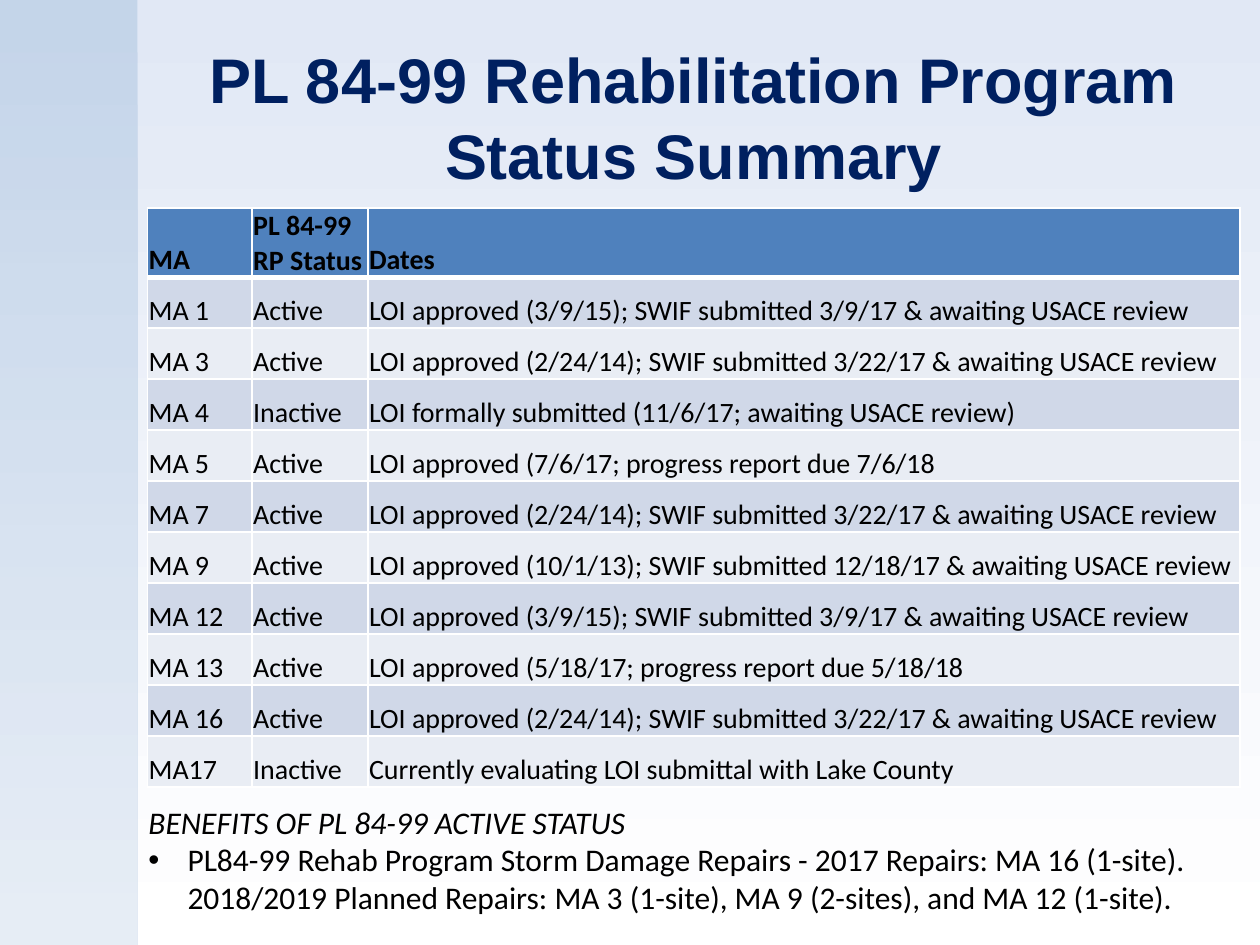
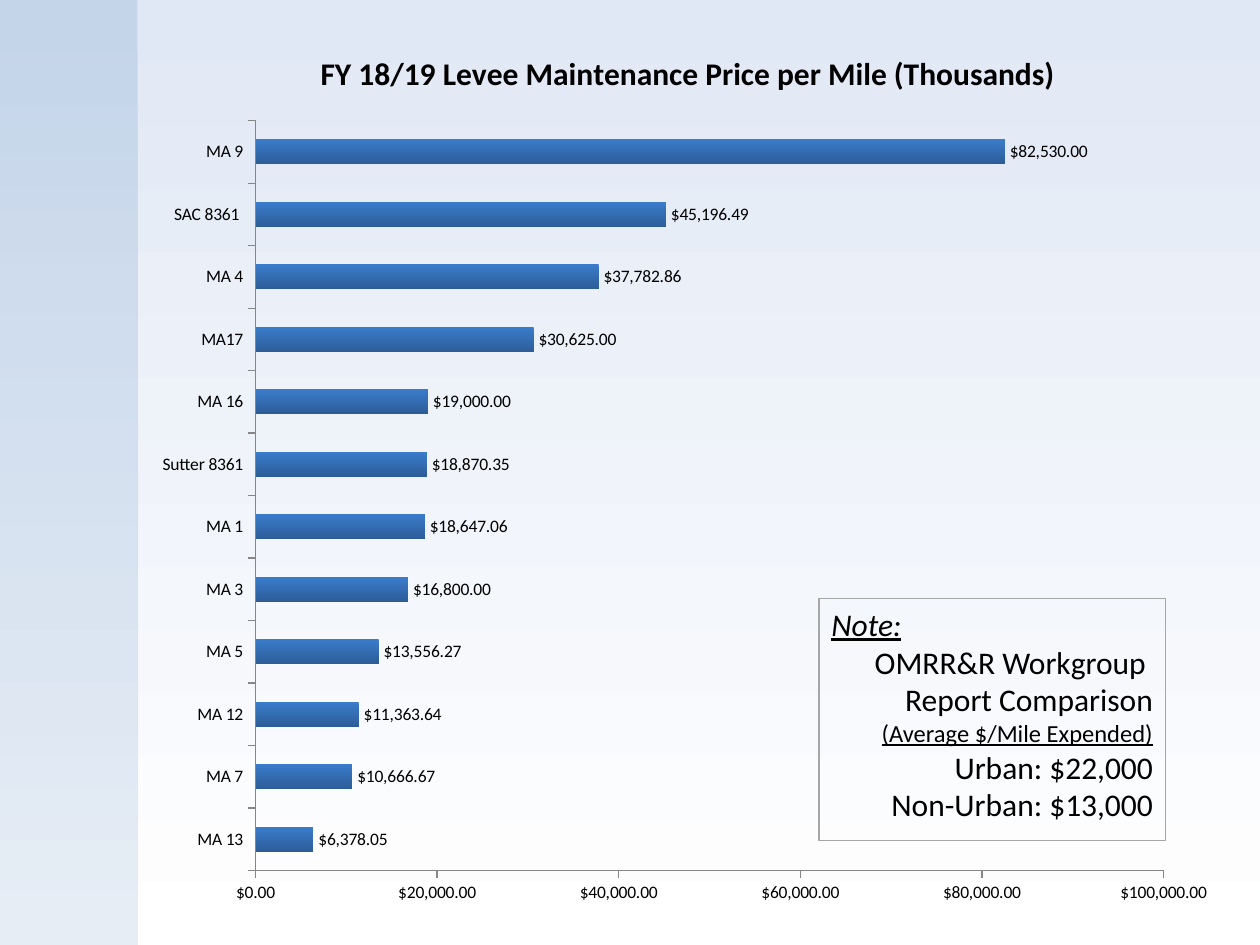
from dataclasses import dataclass
from typing import Optional

from lxml import etree
from pptx import Presentation
from pptx.chart import data as chart_data
from pptx.dml.color import RGBColor
from pptx.enum import chart as ch, shapes, text
from pptx.oxml import ns, parse_xml
from pptx.util import Inches, Pt

NAVY = RGBColor(0x00, 0x20, 0x60)
BLACK = RGBColor(0x00, 0x00, 0x00)
WHITE = RGBColor(0xFF, 0xFF, 0xFF)
PALE_SKY = RGBColor(0xE1, 0xE8, 0xF5)
BAND_TOP = RGBColor(0xB9, 0xCD, 0xE5)
BAND_BOTTOM = RGBColor(0xDC, 0xE6, 0xF2)
HEADER_BLUE = RGBColor(0x4F, 0x81, 0xBD)
ROW_FILLS = (RGBColor(0xD0, 0xD8, 0xE8), RGBColor(0xE9, 0xED, 0xF4))
BAR_TOP = RGBColor(0x3A, 0x7C, 0xCB)
BAR_BOTTOM = RGBColor(0x2C, 0x5D, 0x98)
AXIS_GRAY = RGBColor(0x86, 0x86, 0x86)
NOTE_GRAY = RGBColor(0xA6, 0xA6, 0xA6)

BODY_FONT = "Calibri"
TITLE_FONT = "Arial"
DOLLARS = '"$"#,##0.00'


@dataclass(frozen=True)
class Box:
    left: float
    top: float
    width: float
    height: float

    def lengths(self) -> tuple:
        return tuple(Inches(v) for v in (self.left, self.top, self.width, self.height))


@dataclass(frozen=True)
class Line:
    words: str
    size: int = 18
    font: str = BODY_FONT
    color: RGBColor = BLACK
    bold: bool = False
    italic: bool = False
    underline: bool = False
    align: text.PP_ALIGN = text.PP_ALIGN.LEFT
    bullet: Optional[str] = None


@dataclass(frozen=True)
class Area:
    name: str
    status: str
    dates: str


SWIF_MARCH_9 = "LOI approved (3/9/15); SWIF submitted 3/9/17 & awaiting USACE review"
SWIF_MARCH_22 = "LOI approved (2/24/14); SWIF submitted 3/22/17 & awaiting USACE review"
AREAS = [
    Area("MA 1", "Active", SWIF_MARCH_9),
    Area("MA 3", "Active", SWIF_MARCH_22),
    Area("MA 4", "Inactive", "LOI formally submitted (11/6/17; awaiting USACE review)"),
    Area("MA 5", "Active", "LOI approved (7/6/17; progress report due 7/6/18"),
    Area("MA 7", "Active", SWIF_MARCH_22),
    Area("MA 9", "Active",
         "LOI approved (10/1/13); SWIF submitted 12/18/17 & awaiting USACE review"),
    Area("MA 12", "Active", SWIF_MARCH_9),
    Area("MA 13", "Active", "LOI approved (5/18/17; progress report due 5/18/18"),
    Area("MA 16", "Active", SWIF_MARCH_22),
    Area("MA17", "Inactive", "Currently evaluating LOI submittal with Lake County"),
]
COLUMN_WIDTHS = (0.83, 0.92, 6.92)
HEADER_HEIGHT = 0.55
STATUS_BOX = Box(1.17, 1.65, 8.67, 4.6)

PRICE_PER_MILE = {
    "MA 13": 6378.05, "MA 7": 10666.67, "MA 12": 11363.64, "MA 5": 13556.27,
    "MA 3": 16800, "MA 1": 18647.06, "Sutter 8361": 18870.35, "MA 16": 19000,
    "MA17": 30625, "MA 4": 37782.86, "SAC 8361 ": 45196.49, "MA 9": 82530,
}


def fill_downward(fill, top: RGBColor, bottom: RGBColor) -> None:
    """Two-colour gradient running from top to bottom."""
    fill.gradient()
    fill.gradient_angle = 270
    for stop, color in zip(fill.gradient_stops, (top, bottom)):
        stop.color.rgb = color


def add_slide(prs):
    """Blank slide with the translucent band on its left."""
    slide = prs.slides.add_slide(prs.slide_layouts[6])
    band = slide.shapes.add_shape(shapes.MSO_SHAPE.RECTANGLE,
                                  *Box(0, 0, 1.09, 7.5).lengths())
    band.shadow.inherit = False
    band.line.fill.background()
    fill_downward(band.fill, BAND_TOP, BAND_BOTTOM)
    for color in band.fill._xPr.iter(ns.qn("a:srgbClr")):
        etree.SubElement(color, ns.qn("a:alpha"), val="70000")
    return slide


def write_line(paragraph, line: Line) -> None:
    paragraph.text = line.words
    paragraph.alignment = line.align
    if line.bullet:
        properties = paragraph._p.get_or_add_pPr()
        properties.set("marL", str(Inches(0.31)))
        properties.set("indent", str(-Inches(0.31)))
        etree.SubElement(properties, ns.qn("a:buFont"), typeface="Arial")
        etree.SubElement(properties, ns.qn("a:buChar"), char=line.bullet)
    font = paragraph.font
    font.name, font.size, font.color.rgb = line.font, Pt(line.size), line.color
    font.bold, font.italic, font.underline = line.bold, line.italic, line.underline


def add_lines(slide, box: Box, lines: list[Line], anchor=text.MSO_ANCHOR.TOP):
    textbox = slide.shapes.add_textbox(*box.lengths())
    frame = textbox.text_frame
    frame.word_wrap = True
    frame.vertical_anchor = anchor
    for i, line in enumerate(lines):
        write_line(frame.add_paragraph() if i else frame.paragraphs[0], line)
    return textbox


def set_borders(cell, top: float, bottom: float) -> None:
    """White cell borders, with the given top and bottom widths in points."""
    properties = cell._tc.get_or_add_tcPr()
    widths = {"lnL": 1, "lnR": 1, "lnT": top, "lnB": bottom}
    for i, (side, width) in enumerate(widths.items()):
        properties.insert(i, parse_xml(
            f'<a:{side} {ns.nsdecls("a")} w="{Pt(width)}"><a:solidFill>'
            f'<a:srgbClr val="{WHITE}"/></a:solidFill></a:{side}>'))


def add_status_table(slide) -> None:
    rows = [Area("MA", "PL 84-99 RP Status", "Dates"), *AREAS]
    table = slide.shapes.add_table(len(rows), len(COLUMN_WIDTHS),
                                   *STATUS_BOX.lengths()).table
    for column, width in zip(table.columns, COLUMN_WIDTHS):
        column.width = Inches(width)
    row_height = (STATUS_BOX.height - HEADER_HEIGHT) / len(AREAS)
    for r, area in enumerate(rows):
        is_header = r == 0
        table.rows[r].height = Inches(HEADER_HEIGHT if is_header else row_height)
        for c, words in enumerate((area.name, area.status, area.dates)):
            cell = table.cell(r, c)
            cell.margin_left = cell.margin_right = cell.margin_top = Inches(0.01)
            cell.margin_bottom = 0
            cell.vertical_anchor = text.MSO_ANCHOR.BOTTOM
            cell.fill.solid()
            cell.fill.fore_color.rgb = HEADER_BLUE if is_header else ROW_FILLS[(r - 1) % 2]
            set_borders(cell, top=3 if r == 1 else 1, bottom=3 if is_header else 1)
            write_line(cell.text_frame.paragraphs[0], Line(words, 16, bold=is_header))


def place_plot(chart, x: float, y: float, w: float, h: float) -> None:
    """Fix the inner plot area, in fractions of the chart."""
    plot_area = chart._chartSpace.chart.plotArea
    for auto_layout in plot_area.findall(ns.qn("c:layout")):
        plot_area.remove(auto_layout)
    plot_area.insert(0, parse_xml(
        f'<c:layout {ns.nsdecls("c")}><c:manualLayout><c:layoutTarget val="inner"/>'
        '<c:xMode val="edge"/><c:yMode val="edge"/>'
        f'<c:x val="{x}"/><c:y val="{y}"/><c:w val="{w}"/><c:h val="{h}"/>'
        '</c:manualLayout></c:layout>'))


def add_price_chart(slide) -> None:
    prices = chart_data.CategoryChartData(number_format=DOLLARS)
    prices.categories = list(PRICE_PER_MILE)
    prices.add_series("Series 1", list(PRICE_PER_MILE.values()))
    chart = slide.shapes.add_chart(ch.XL_CHART_TYPE.BAR_CLUSTERED,
                                   *Box(1.17, 0.17, 8.58, 7.17).lengths(), prices).chart
    chart.has_legend = False
    chart.font.name, chart.font.size, chart.font.color.rgb = BODY_FONT, Pt(10), BLACK
    chart.has_title = True
    write_line(chart.chart_title.text_frame.paragraphs[0],
               Line("FY 18/19 Levee Maintenance Price per Mile (Thousands)", bold=True,
                    align=text.PP_ALIGN.CENTER))
    chart.chart_title.include_in_layout = False
    place_plot(chart, 0.1, 0.11, 0.84, 0.83)

    for axis in (chart.category_axis, chart.value_axis):
        axis.has_major_gridlines = False
        axis.major_tick_mark = ch.XL_TICK_MARK.OUTSIDE
        axis.format.line.color.rgb = AXIS_GRAY
    chart.value_axis.minimum_scale = 0
    chart.value_axis.maximum_scale = 100000
    chart.value_axis.major_unit = 20000
    chart.value_axis.tick_labels.number_format = DOLLARS
    chart.value_axis.tick_labels.number_format_is_linked = False

    plot = chart.plots[0]
    plot.gap_width = 150
    plot.vary_by_categories = False
    bars = plot.series[0]
    bars.invert_if_negative = False
    fill_downward(bars.format.fill, BAR_TOP, BAR_BOTTOM)
    labels = bars.data_labels
    labels.show_value = True
    labels.number_format = DOLLARS
    labels.number_format_is_linked = False
    labels.position = ch.XL_LABEL_POSITION.OUTSIDE_END


def build_status_slide(prs) -> None:
    slide = add_slide(prs)
    add_lines(slide, Box(1.17, 0.3, 8.67, 1.25),
              [Line("PL 84-99 Rehabilitation Program\vStatus Summary", 36, TITLE_FONT,
                    NAVY, bold=True, align=text.PP_ALIGN.CENTER)],
              text.MSO_ANCHOR.MIDDLE)
    add_status_table(slide)
    add_lines(slide, Box(1.08, 6.32, 8.58, 1.01), [
        Line("BENEFITS OF PL 84-99 ACTIVE STATUS", italic=True),
        Line("PL84-99 Rehab Program Storm Damage Repairs - 2017 Repairs: MA 16 (1-site).\v"
             "2018/2019 Planned Repairs: MA 3 (1-site), MA 9 (2-sites), and MA 12 (1-site).",
             bullet="•"),
    ])


def build_price_slide(prs) -> None:
    slide = add_slide(prs)
    add_price_chart(slide)
    right = text.PP_ALIGN.RIGHT
    note = add_lines(slide, Box(6.5, 4.75, 2.75, 1.92), [
        Line("Note:", italic=True, underline=True),
        Line("OMRR&R Workgroup ", align=right),
        Line("Report Comparison", align=right),
        Line("(Average $/Mile Expended)", 14, underline=True, align=right),
        Line("Urban: $22,000", align=right),
        Line("Non-Urban: $13,000", align=right),
    ])
    note.line.color.rgb = NOTE_GRAY
    note.line.width = Pt(0.75)


def main() -> None:
    prs = Presentation()
    prs.slide_width, prs.slide_height = Inches(10), Inches(7.5)
    fill_downward(prs.slide_master.background.fill, PALE_SKY, WHITE)
    build_status_slide(prs)
    build_price_slide(prs)
    prs.save("out.pptx")


if __name__ == "__main__":
    main()
